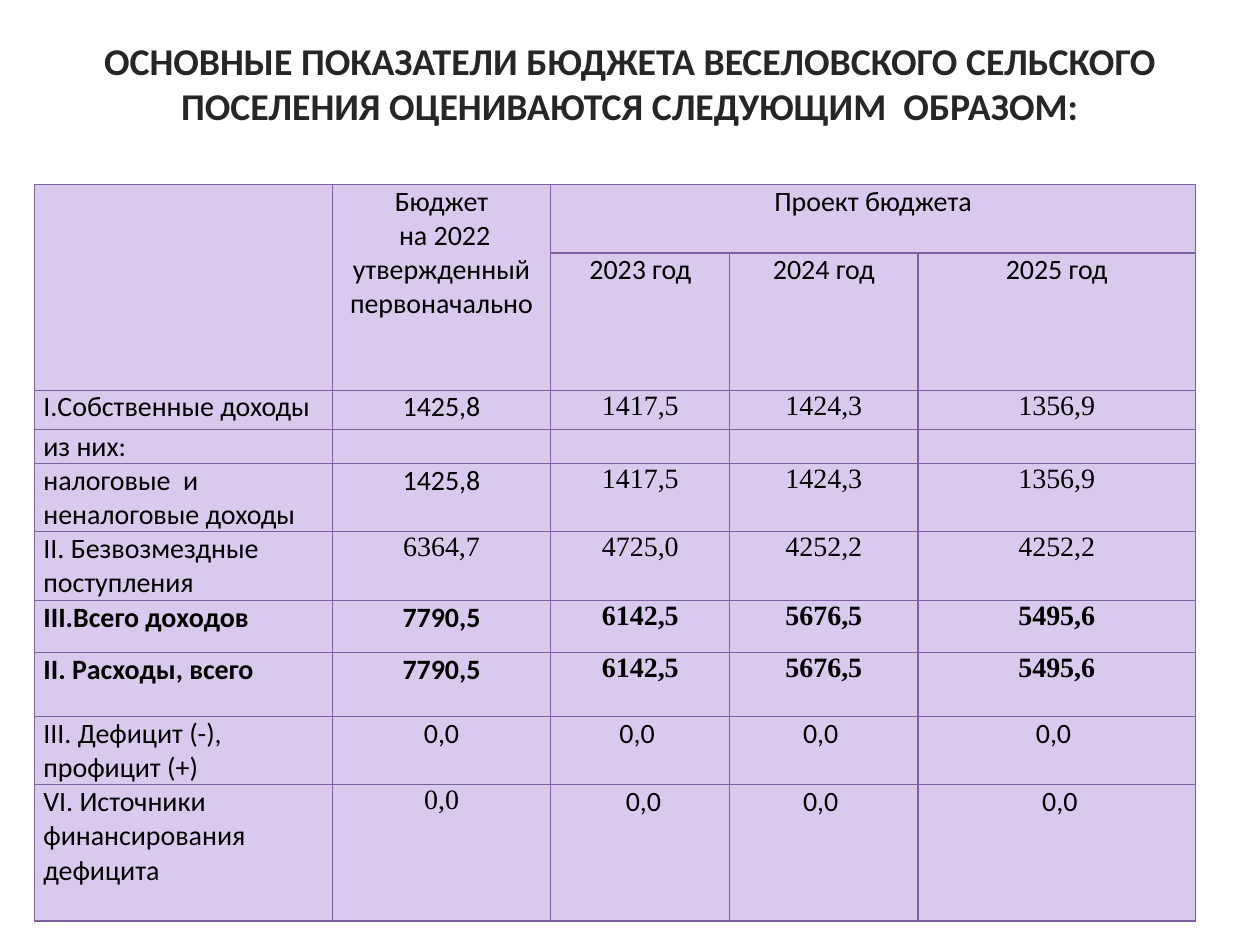
from lxml import etree
from pptx import Presentation
from pptx.dml.color import RGBColor
from pptx.enum import text
from pptx.oxml import ns
from pptx.util import Pt

SANS, SERIF = "Calibri", "Times New Roman"
BLACK, LILAC, PURPLE = "000000", "D9CAED", "7D60A0"
LEFT, MID = text.PP_ALIGN.LEFT, text.PP_ALIGN.CENTER
WIDTHS = [170, 125, 102.2, 107.6, 158.6]
HEIGHTS = [39.2, 78.4, 22.4, 19.5, 39.1, 39.2, 29.7, 36.6, 39.2, 77.8]
YEARS = ["2023 год", "2024 год", "2025 год"]
# label, values, bold, columns set in the serif font
ROWS = [
    ("I.Собственные доходы", ["1425,8", "1417,5", "1424,3", "1356,9"], False, (2, 3, 4)),
    ("из них:", [""] * 4, False, ()),
    ("налоговые  и неналоговые доходы", ["1425,8", "1417,5", "1424,3", "1356,9"], False, (2, 3, 4)),
    ("II. Безвозмездные поступления", ["6364,7", "4725,0", "4252,2", "4252,2"], False, (1, 2, 3, 4)),
    ("III.Всего доходов", ["7790,5", "6142,5", "5676,5", "5495,6"], True, (2, 3, 4)),
    ("II. Расходы, всего", ["7790,5", "6142,5", "5676,5", "5495,6"], True, (2, 3, 4)),
    ("III. Дефицит (-), профицит (+) ", ["0,0", "0,0 ", "0,0 ", "0,0 "], False, ()),
    ("VI. Источники финансирования дефицита", ["0,0", " 0,0", "0,0 ", " 0,0"], False, (1,)),
]


def paint(color):
    return RGBColor.from_string(color)


def write(par, words, size, color=BLACK, bold=False, face=SANS, align=MID):
    par.alignment = align
    run = par.add_run()
    run.text = words
    font = run.font
    font.size, font.bold, font.name = Pt(size), bold, face
    font.color.rgb = paint(color)


def title(slide, words):
    box = slide.shapes.add_textbox(Pt(36), Pt(9.4), Pt(648), Pt(102.2))
    frame = box.text_frame
    frame.word_wrap = True
    frame.vertical_anchor = text.MSO_ANCHOR.MIDDLE
    frame.margin_bottom = Pt(30)
    write(frame.paragraphs[0], words, 21.6, "262626", True)


def style(cell):
    """Set insets, borders and fill of a cell."""
    cell.margin_left = cell.margin_right = Pt(5)
    cell.margin_top = cell.margin_bottom = 0
    props = cell._tc.get_or_add_tcPr()
    for side in ("lnL", "lnR", "lnT", "lnB"):
        line = etree.SubElement(props, ns.qn("a:" + side), w=str(Pt(0.75)))
        fill = etree.SubElement(line, ns.qn("a:solidFill"))
        etree.SubElement(fill, ns.qn("a:srgbClr"), val=PURPLE)
    cell.fill.solid()
    cell.fill.fore_color.rgb = paint(LILAC)


def fill_in(cell, words, **look):
    """Write one paragraph per line; an empty cell only gets a text size."""
    frame = cell.text_frame
    if not words:
        par = frame.paragraphs[0]._p
        etree.SubElement(par, ns.qn("a:endParaRPr"), sz="1600")
        return
    for i, part in enumerate(words.split("\n")):
        par = frame.add_paragraph() if i else frame.paragraphs[0]
        write(par, part, 16, **look)


def head(grid):
    grid.cell(0, 0).merge(grid.cell(1, 0))
    grid.cell(0, 1).merge(grid.cell(1, 1))
    grid.cell(0, 2).merge(grid.cell(0, 4))
    fill_in(grid.cell(0, 1), "Бюджет\n на 2022 утвержденный первоначально")
    fill_in(grid.cell(0, 2), "Проект бюджета")
    for col, year in enumerate(YEARS, 2):
        fill_in(grid.cell(1, col), year)


def body(grid):
    for row, (label, values, bold, serif) in enumerate(ROWS, 2):
        for col, words in enumerate([label] + values):
            fill_in(grid.cell(row, col), words, bold=bold,
                    face=SERIF if col in serif else SANS,
                    align=MID if col else LEFT)


def table(slide):
    grid = slide.shapes.add_table(len(HEIGHTS), len(WIDTHS), Pt(19.8), Pt(105.4),
                                  Pt(sum(WIDTHS)), Pt(sum(HEIGHTS))).table
    for col, width in zip(grid.columns, WIDTHS):
        col.width = Pt(width)
    for row, height in zip(grid.rows, HEIGHTS):
        row.height = Pt(height)
        for cell in row.cells:
            style(cell)
    head(grid)
    body(grid)


def main():
    deck = Presentation()
    deck.slide_width, deck.slide_height = Pt(720), Pt(540)
    slide = deck.slides.add_slide(deck.slide_layouts[6])
    title(slide, "ОСНОВНЫЕ ПОКАЗАТЕЛИ БЮДЖЕТА ВЕСЕЛОВСКОГО СЕЛЬСКОГО "
                 "ПОСЕЛЕНИЯ ОЦЕНИВАЮТСЯ СЛЕДУЮЩИМ  ОБРАЗОМ:")
    table(slide)
    deck.save("out.pptx")


if __name__ == "__main__":
    main()
